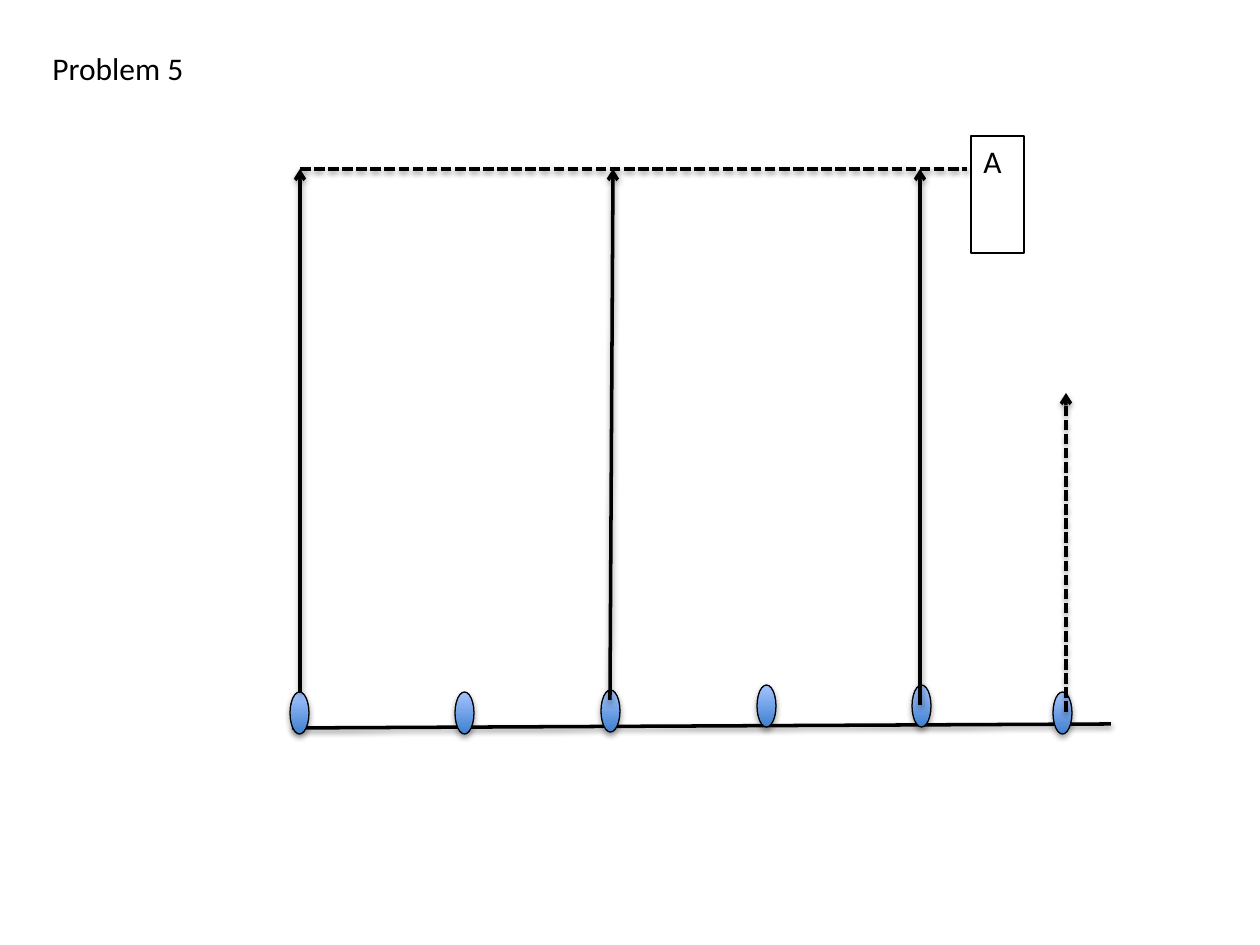
from dataclasses import dataclass

from lxml import etree
from pptx import Presentation
from pptx import util as u
from pptx.dml.color import RGBColor
from pptx.enum import dml, shapes, text
from pptx.oxml.ns import qn

PX = 914400 / 126
HEX = {"ink": "000000", "low": "3F80CE", "high": "A4C4FF"}


@dataclass
class Bead:
    x: int
    y: int
    w: int = 19
    h: int = 42


@dataclass
class Line:
    x1: int
    y1: int
    x2: int
    y2: int
    dash: bool = False
    arrow: bool = False


BEADS = [Bead(290, 692), Bead(455, 692), Bead(601, 690),
         Bead(757, 685), Bead(912, 685), Bead(1053, 692)]
BASE = Line(292, 728, 1111, 724)
RAYS = [
    Line(1066, 712, 1066, 393, dash=True, arrow=True),
    Line(610, 700, 613, 169, arrow=True),
    Line(920, 705, 920, 169, arrow=True),
    Line(300, 169, 967, 169, dash=True),
    Line(300, 692, 300, 169, arrow=True),
]


def emu(*px: int) -> list[u.Emu]:
    return [u.Emu(round(n * PX)) for n in px]


def ink(name: str) -> RGBColor:
    return RGBColor.from_string(HEX[name])


def shade(shape, dist: int, alpha: int) -> None:
    """Add a soft shadow straight below the shape."""
    props = shape._element.spPr
    for old in props.findall(qn("a:effectLst")):
        props.remove(old)
    box = etree.SubElement(props, qn("a:effectLst"))
    drop = etree.SubElement(box, qn("a:outerShdw"), blurRad="40000",
                            dist=str(dist), dir="5400000", rotWithShape="0")
    tint = etree.SubElement(drop, qn("a:srgbClr"), val=HEX["ink"])
    etree.SubElement(tint, qn("a:alpha"), val=str(alpha * 1000))


def add_line(slide, line: Line) -> None:
    item = slide.shapes.add_connector(
        shapes.MSO_CONNECTOR.STRAIGHT,
        *emu(line.x1, line.y1, line.x2, line.y2))
    item.line.color.rgb = ink("ink")
    item.line.width = u.Pt(2)
    if line.dash:
        item.line.dash_style = dml.MSO_LINE.SQUARE_DOT
    if line.arrow:
        etree.SubElement(item.line._get_or_add_ln(), qn("a:tailEnd"),
                         type="arrow")
    shade(item, 20000, 38)


def add_bead(slide, bead: Bead) -> None:
    item = slide.shapes.add_shape(
        shapes.MSO_SHAPE.OVAL, *emu(bead.x, bead.y, bead.w, bead.h))
    item.fill.gradient()
    item.fill.gradient_angle = 90
    for stop, name, pos in zip(item.fill.gradient_stops,
                               ("low", "high"), (0, 1)):
        stop.color.rgb = ink(name)
        stop.position = pos
    item.line.color.rgb = ink("ink")
    item.line.width = u.Pt(0.75)
    shade(item, 23000, 35)


def add_label(slide, words: str, x: int, y: int, w: int, h: int,
              wrap: bool = False):
    item = slide.shapes.add_textbox(*emu(x, y, w, h))
    frame = item.text_frame
    frame.word_wrap = wrap
    frame.auto_size = text.MSO_AUTO_SIZE.NONE
    frame.text = words
    font = frame.paragraphs[0].font
    font.name = "Calibri"
    font.size = u.Pt(18)
    font.color.rgb = ink("ink")
    return item


def main() -> None:
    deck = Presentation()
    deck.slide_width, deck.slide_height = emu(1260, 945)
    slide = deck.slides.add_slide(deck.slide_layouts[6])

    add_label(slide, "Problem 5", 40, 43, 159, 50)
    add_line(slide, BASE)
    for bead in BEADS:
        add_bead(slide, bead)
    box = add_label(slide, "A", 971, 136, 53, 117, wrap=True)
    box.line.color.rgb = ink("ink")
    box.line.width = u.Pt(0.75)
    for ray in RAYS:
        add_line(slide, ray)

    deck.save("out.pptx")


if __name__ == "__main__":
    main()
